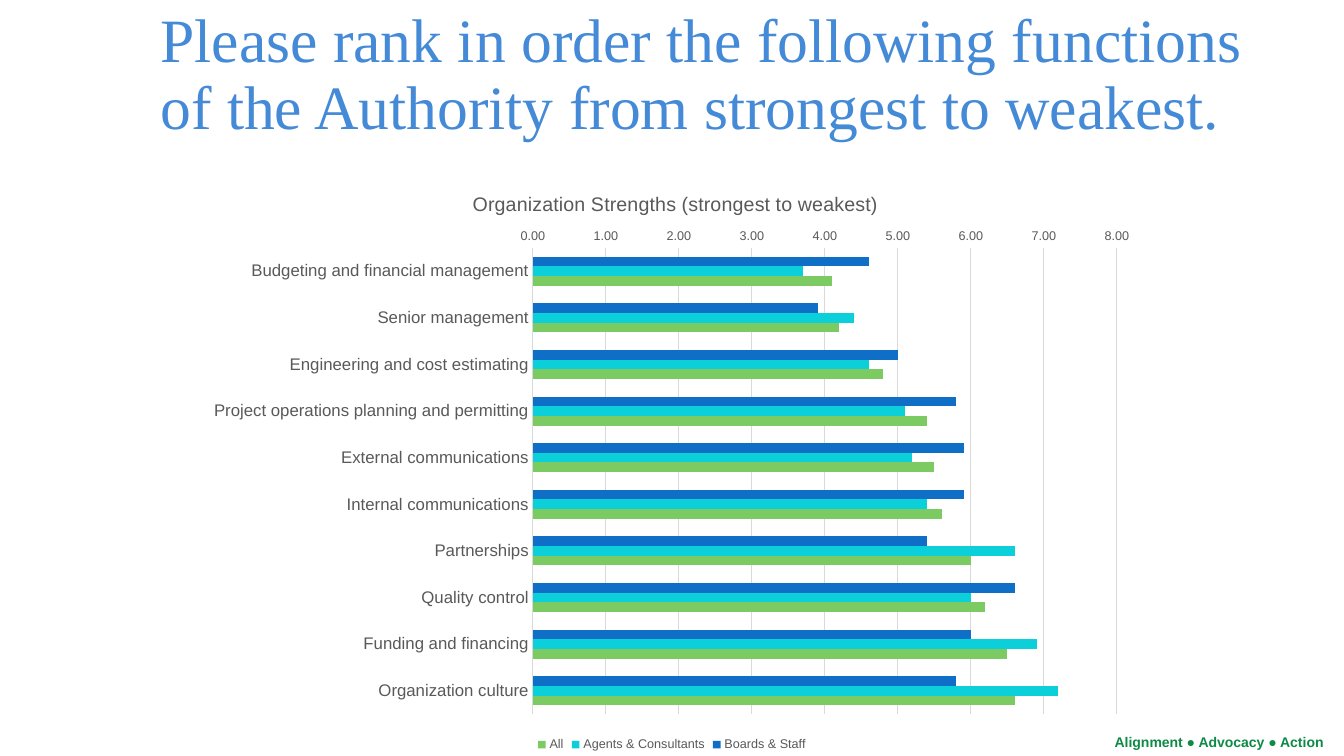
"""Build the slide ranking the Authority's functions from strongest to weakest."""
from lxml import etree
from pptx import Presentation
from pptx.chart.data import CategoryChartData
from pptx.dml.color import RGBColor
from pptx.enum.chart import XL_CHART_TYPE as ChartType
from pptx.enum.chart import XL_LEGEND_POSITION as LegendPosition
from pptx.enum.chart import XL_TICK_MARK as TickMark
from pptx.enum.text import MSO_ANCHOR as Anchor
from pptx.oxml.ns import qn
from pptx.util import Inches, Pt

WIDTH, HEIGHT = 13.33, 7.5
COLORS = {"title": "448AD7", "motto": "0D8A45", "label": "595959", "grid": "D9D9D9"}
TITLE = "Please rank in order the following functions of the Authority from strongest to weakest."
MOTTO = "Alignment ● Advocacy ● Action"
CHART_TITLE = "Organization Strengths (strongest to weakest)"
GROUPS = [
    ("Boards & Staff", "0F6FC6"),
    ("Agents & Consultants", "0BD0D9"),
    ("All", "7CCA62"),
]
RANKINGS = [
    ("Budgeting and financial management", 4.6, 3.7, 4.1),
    ("Senior management", 3.9, 4.4, 4.2),
    ("Engineering and cost estimating", 5, 4.6, 4.8),
    ("Project operations planning and permitting", 5.8, 5.1, 5.4),
    ("External communications", 5.9, 5.2, 5.5),
    ("Internal communications", 5.9, 5.4, 5.6),
    ("Partnerships", 5.4, 6.6, 6),
    ("Quality control", 6.6, 6, 6.2),
    ("Funding and financing", 6, 6.9, 6.5),
    ("Organization culture", 5.8, 7.2, 6.6),
]
BOXES = {
    "title": (0.112, 0, 0.863, 0.201),
    "motto": (0.822, 0.963, 0.179, 0.036),
    "chart": (0.1455, 0.2213, 0.709, 0.7787),
}
PLOT_LAYOUT = {"x": 0.354, "y": 0.137, "w": 0.613, "h": 0.792}
TITLE_LAYOUT = {"x": 0.287, "y": 0.035}


def place(name):
    """Turn shares of the slide into lengths."""
    left, top, width, height = BOXES[name]
    return [Inches(share * side) for share, side in
            zip((left, top, width, height), (WIDTH, HEIGHT) * 2)]


def style(font, size, color, name="Arial", bold=False):
    """Set a font's look."""
    font.size, font.name, font.bold = Pt(size), name, bold
    font.color.rgb = RGBColor.from_string(COLORS[color])


def add_text(slide, name, text, size, font_name, bold=False, wrap=True):
    """Add a one-paragraph text box."""
    shape = slide.shapes.add_textbox(*place(name))
    frame = shape.text_frame
    frame.text = text
    frame.word_wrap = wrap
    frame.vertical_anchor = Anchor.MIDDLE
    style(frame.paragraphs[0].runs[0].font, size, name, font_name, bold)
    return frame.paragraphs[0]


def set_layout(element, position, before, inner=False):
    """Fix a chart part's position as shares of the chart."""
    for old in element.findall(qn("c:layout")):
        element.remove(old)
    layout = etree.Element(qn("c:layout"))
    manual = etree.SubElement(layout, qn("c:manualLayout"))
    entries = [("layoutTarget", "inner")] if inner else []
    entries += [("xMode", "edge"), ("yMode", "edge"), *position.items()]
    for tag, value in entries:
        etree.SubElement(manual, qn(f"c:{tag}")).set("val", str(value))
    element.insert(before, layout)


def format_line(line):
    """Give a chart line the pale grid look."""
    line.color.rgb = RGBColor.from_string(COLORS["grid"])
    line.width = Pt(0.75)


def add_rankings(slide):
    """Add the clustered bar chart."""
    data = CategoryChartData(number_format="0.00")
    names, *columns = zip(*RANKINGS)
    data.categories = names
    for (group, _), values in zip(GROUPS, columns):
        data.add_series(group, values)
    chart = slide.shapes.add_chart(ChartType.BAR_CLUSTERED, *place("chart"), data).chart
    chart.font.size, chart.font.name = Pt(10), "Arial"

    chart.has_title = True
    title = chart.chart_title
    title.text_frame.text = CHART_TITLE
    style(title.text_frame.paragraphs[0].runs[0].font, 14, "label")
    title.include_in_layout = False
    set_layout(title._element, TITLE_LAYOUT, 1)

    chart.has_legend = True
    chart.legend.position = LegendPosition.BOTTOM
    chart.legend.include_in_layout = False
    style(chart.legend.font, 9, "label")

    for axis, size in ((chart.category_axis, 12), (chart.value_axis, 9)):
        axis.major_tick_mark = axis.minor_tick_mark = TickMark.NONE
        style(axis.tick_labels.font, size, "label")
    chart.category_axis.reverse_order = True
    format_line(chart.category_axis.format.line)
    axis = chart.value_axis
    axis.minimum_scale, axis.maximum_scale, axis.major_unit = 0, 8, 1
    axis.tick_labels.number_format = "0.00"
    axis.tick_labels.number_format_is_linked = False
    axis.format.line.fill.background()
    format_line(axis.major_gridlines.format.line)

    plot = chart.plots[0]
    plot.gap_width, plot.overlap, plot.vary_by_categories = 182, 0, False
    for series, (_, color) in zip(plot.series, GROUPS):
        series.format.fill.solid()
        series.format.fill.fore_color.rgb = RGBColor.from_string(color)
        series.invert_if_negative = False
    set_layout(plot._element.getparent(), PLOT_LAYOUT, 0, inner=True)


def main():
    """Build and save the slide."""
    presentation = Presentation()
    presentation.slide_width, presentation.slide_height = Inches(WIDTH), Inches(HEIGHT)
    slide = presentation.slides.add_slide(presentation.slide_layouts[6])
    add_text(slide, "motto", MOTTO, 10, "Arial", bold=True, wrap=False)
    add_text(slide, "title", TITLE, 44, "Times New Roman").line_spacing = 0.9
    add_rankings(slide)
    presentation.save("out.pptx")


if __name__ == "__main__":
    main()
